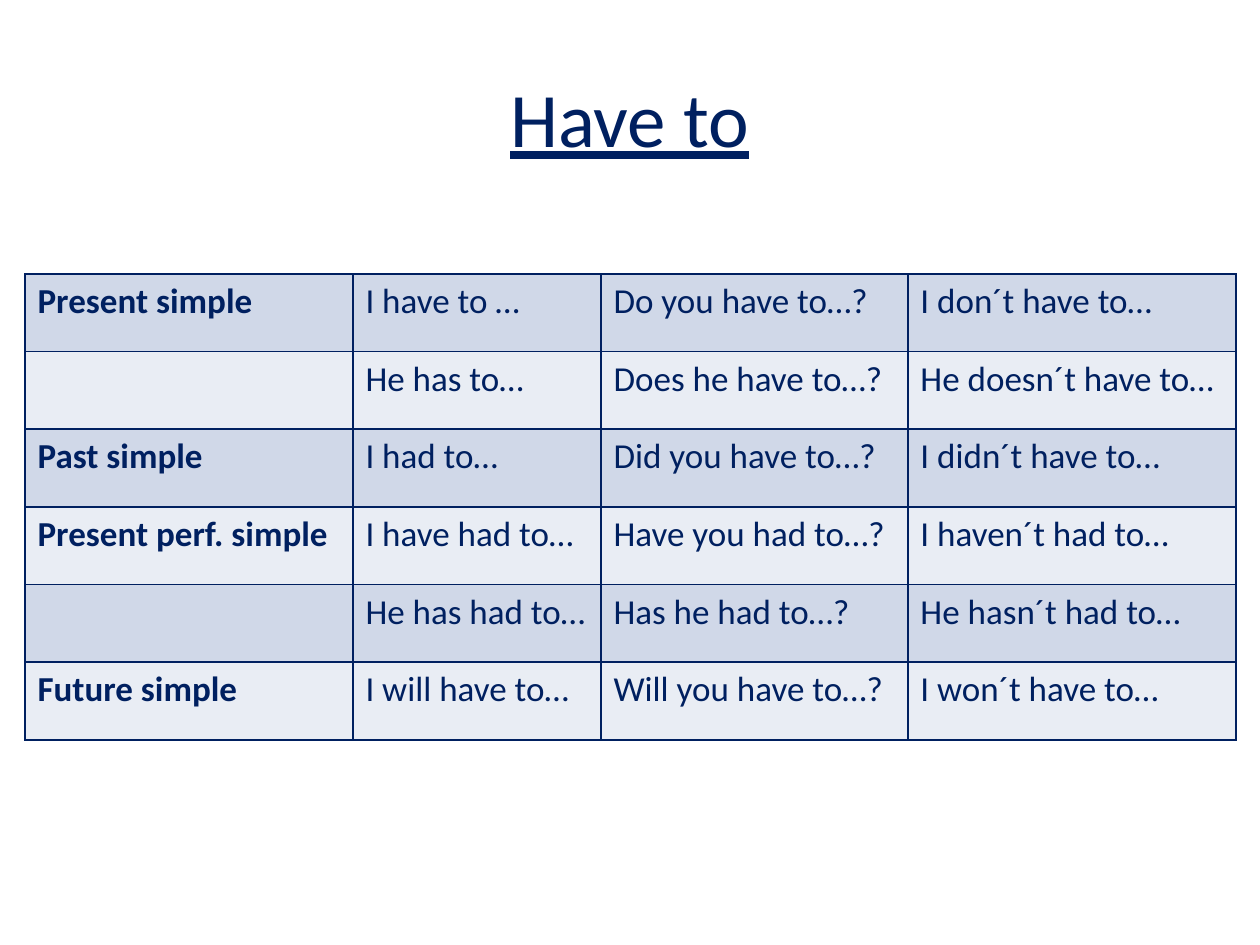
from lxml.etree import SubElement
from pptx import Presentation
from pptx.dml.color import RGBColor
from pptx.enum.text import MSO_ANCHOR, PP_ALIGN
from pptx.oxml.ns import qn
from pptx.util import Pt

PX = 914400 // 126
NAVY = "002060"
BANDS = ["D0D8E8", "E9EDF4"]
COLUMN_WIDTHS = [328, 248, 307, 328]
ROWS = [
    ["Present simple", "I have to …", "Do you have to…?", "I don´t have to…"],
    ["", "He has to…", "Does he have to…?", "He doesn´t have to…"],
    ["Past simple", "I had to…", "Did you have to…?", "I didn´t have to…"],
    ["Present perf. simple", "I have had to…", "Have you had to…?", "I haven´t had to…"],
    ["", "He has had to…", "Has he had to…?", "He hasn´t had to…"],
    ["Future simple", "I will have to…", "Will you have to…?", "I won´t have to…"],
]


def style_font(font, size):
    font.name = "Calibri"
    font.size = Pt(size)
    font.color.rgb = RGBColor.from_string(NAVY)


def add_borders(cell):
    properties = cell._tc.get_or_add_tcPr()
    for side in ("a:lnL", "a:lnR", "a:lnT", "a:lnB"):
        line = SubElement(properties, qn(side), w=str(Pt(1)))
        fill = SubElement(line, qn("a:solidFill"))
        SubElement(fill, qn("a:srgbClr"), val=NAVY)


deck = Presentation()
deck.slide_width = 1260 * PX
deck.slide_height = 945 * PX
page = deck.slides.add_slide(deck.slide_layouts[6])

title = page.shapes.add_textbox(63 * PX, 38 * PX, 1134 * PX, 157 * PX).text_frame
title.word_wrap = True
title.vertical_anchor = MSO_ANCHOR.MIDDLE
para = title.paragraphs[0]
para.text = "Have to"
para.alignment = PP_ALIGN.CENTER
style_font(para.font, 44)
para.font.underline = True

table = page.shapes.add_table(
    len(ROWS), len(COLUMN_WIDTHS), 25 * PX, 274 * PX, sum(COLUMN_WIDTHS) * PX, 466 * PX
).table
for column, width in zip(table.columns, COLUMN_WIDTHS):
    column.width = width * PX

for row_index, texts in enumerate(ROWS):
    for column_index, text in enumerate(texts):
        cell = table.cell(row_index, column_index)
        add_borders(cell)
        cell.fill.solid()
        cell.fill.fore_color.rgb = RGBColor.from_string(BANDS[row_index % 2])
        cell.text = text
        para = cell.text_frame.paragraphs[0]
        style_font(para.font, 20)
        para.font.bold = column_index == 0

deck.save("out.pptx")
